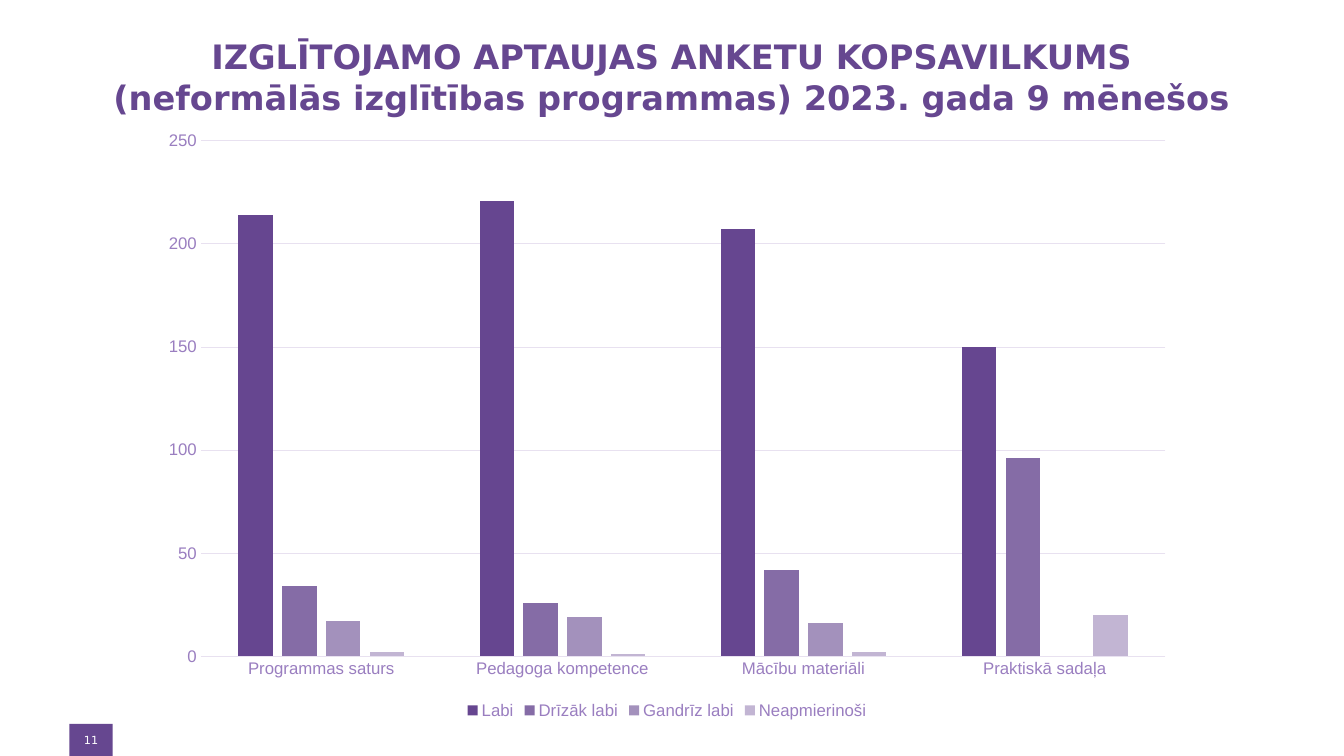
from dataclasses import dataclass

from pptx import Presentation
from pptx.chart.axis import CategoryAxis, ValueAxis
from pptx.chart.data import CategoryChartData
from pptx.dml.color import RGBColor
from pptx.enum.chart import XL_CHART_TYPE, XL_LEGEND_POSITION, XL_TICK_MARK
from pptx.enum.shapes import MSO_SHAPE
from pptx.enum.text import MSO_ANCHOR, MSO_AUTO_SIZE, PP_ALIGN
from pptx.slide import Slide
from pptx.text.text import Font, TextFrame
from pptx.util import Cm, Pt


@dataclass(frozen=True)
class Theme:
    purple: str = "664790"
    label: str = "9A7EC0"
    grid: str = "E8E1F0"
    white: str = "FFFFFF"
    heading_font: str = "DejaVu Sans"
    chart_font: str = "Arial"
    title_size: int = 24
    label_size: int = 12
    chart_size: int = 10
    number_size: int = 8
    line_width: float = 0.75


@dataclass(frozen=True)
class Rating:
    name: str
    counts: tuple[int | None, ...]
    color: str


THEME = Theme()
TITLE_LINES = (
    "IZGLĪTOJAMO APTAUJAS ANKETU KOPSAVILKUMS",
    "(neformālās izglītības programmas) 2023. gada 9 mēnešos",
)
TOPICS = ("Programmas saturs", "Pedagoga kompetence", "Mācību materiāli", "Praktiskā sadaļa")
RATINGS = (
    Rating("Labi", (214, 221, 207, 150), "664690"),
    Rating("Drīzāk labi", (34, 26, 42, 96), "856CA6"),
    Rating("Gandrīz labi", (17, 19, 16, None), "A391BC"),
    Rating("Neapmierinoši", (2, 1, 2, 20), "C2B5D3"),
)


def rgb(color: str) -> RGBColor:
    return RGBColor.from_string(color)


def style_font(font: Font, name: str, size: int, color: str, bold: bool = False) -> None:
    font.name = name
    font.size = Pt(size)
    font.bold = bold
    font.color.rgb = rgb(color)


def set_margins(tf: TextFrame, margin: Cm) -> None:
    tf.margin_left = tf.margin_right = tf.margin_top = tf.margin_bottom = margin


def add_title(s: Slide) -> None:
    title = s.shapes.title
    title.left, title.top, title.width, title.height = Cm(1.75), Cm(0.91), Cm(30.35), Cm(2.11)
    tf = title.text_frame
    tf.word_wrap = True
    tf.auto_size = MSO_AUTO_SIZE.NONE
    tf.vertical_anchor = MSO_ANCHOR.TOP
    set_margins(tf, Cm(0))
    for i, line in enumerate(TITLE_LINES):
        p = tf.add_paragraph() if i else tf.paragraphs[0]
        p.alignment = PP_ALIGN.CENTER
        r = p.add_run()
        r.text = line
        style_font(r.font, THEME.heading_font, THEME.title_size, THEME.purple, bold=True)
    # The first line sits slightly left of centre
    tf.paragraphs[0]._p.get_or_add_pPr().set("indent", str(Cm(-1.2)))


def add_page_number(s: Slide, number: str) -> None:
    sp = s.shapes.add_shape(MSO_SHAPE.RECTANGLE, Cm(1.75), Cm(18.24), Cm(1.09), Cm(0.81))
    sp.shadow.inherit = False
    sp.fill.solid()
    sp.fill.fore_color.rgb = rgb(THEME.purple)
    sp.line.fill.background()
    tf = sp.text_frame
    tf.word_wrap = True
    tf.vertical_anchor = MSO_ANCHOR.MIDDLE
    set_margins(tf, Cm(0.1))
    p = tf.paragraphs[0]
    p.alignment = PP_ALIGN.CENTER
    r = p.add_run()
    r.text = number
    style_font(r.font, THEME.heading_font, THEME.number_size, THEME.white)


def style_axis(axis: CategoryAxis | ValueAxis) -> None:
    axis.major_tick_mark = axis.minor_tick_mark = XL_TICK_MARK.NONE
    style_font(axis.tick_labels.font, THEME.chart_font, THEME.label_size, THEME.label)


def add_ratings_chart(s: Slide) -> None:
    data = CategoryChartData()
    data.categories = TOPICS
    for rating in RATINGS:
        data.add_series(rating.name, rating.counts)
    chart = s.shapes.add_chart(
        XL_CHART_TYPE.COLUMN_CLUSTERED, Cm(3.73), Cm(3.02), Cm(26.16), Cm(15.21), data
    ).chart
    chart.has_title = False
    style_font(chart.font, THEME.chart_font, THEME.chart_size, RATINGS[0].color)

    plot = chart.plots[0]
    plot.vary_by_categories = False
    plot.gap_width = 219
    plot.overlap = -27
    for series, rating in zip(plot.series, RATINGS):
        series.format.fill.solid()
        series.format.fill.fore_color.rgb = rgb(rating.color)

    topics, counts = chart.category_axis, chart.value_axis
    for axis in (topics, counts):
        style_axis(axis)
    counts.minimum_scale, counts.maximum_scale, counts.major_unit = 0, 250, 50
    counts.has_major_gridlines = True
    counts.format.line.fill.background()
    for line in (topics.format.line, counts.major_gridlines.format.line):
        line.color.rgb = rgb(THEME.grid)
        line.width = Pt(THEME.line_width)

    chart.has_legend = True
    chart.legend.position = XL_LEGEND_POSITION.BOTTOM
    chart.legend.include_in_layout = False
    style_font(chart.legend.font, THEME.chart_font, THEME.label_size, THEME.label)


def main() -> None:
    prs = Presentation()
    prs.slide_width, prs.slide_height = Cm(33.87), Cm(19.05)
    s = prs.slides.add_slide(prs.slide_layouts.get_by_name("Title Only"))
    add_title(s)
    add_page_number(s, "11")
    add_ratings_chart(s)
    prs.save("out.pptx")


if __name__ == "__main__":
    main()
